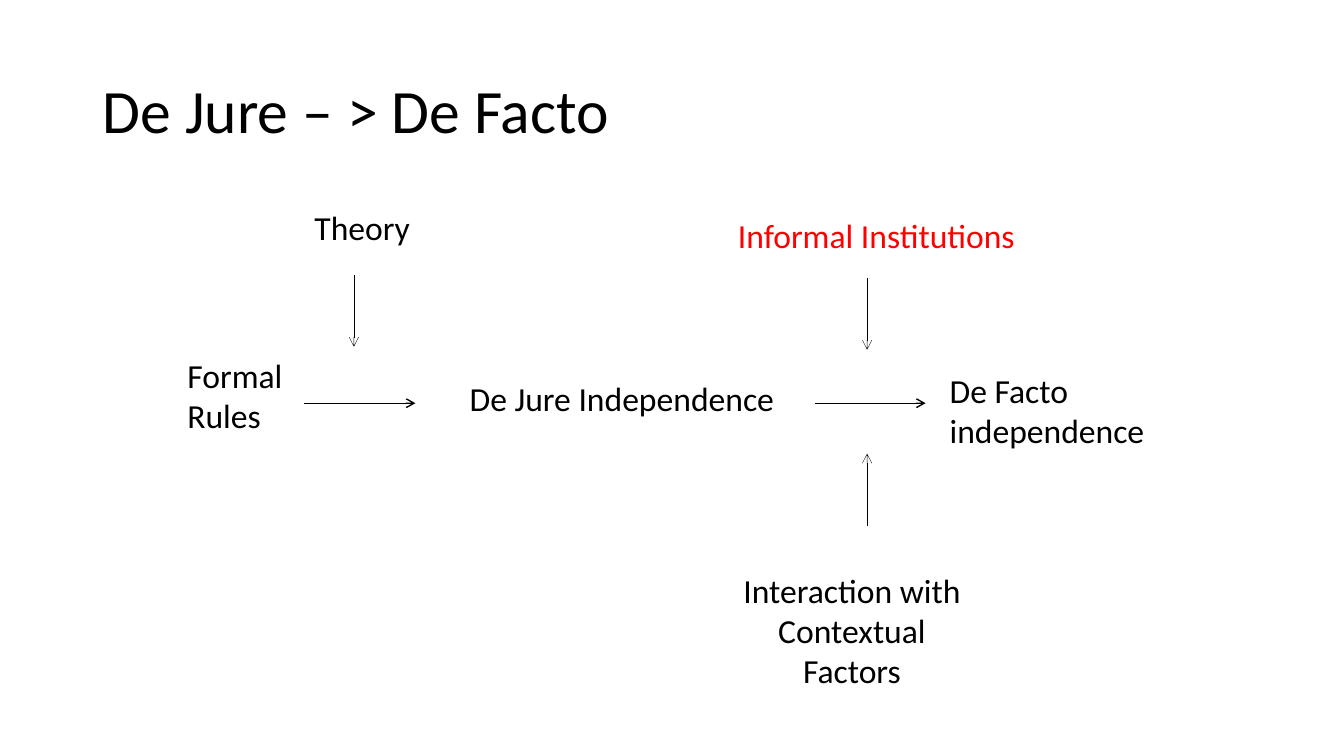
from pptx import Presentation
from pptx.dml.color import RGBColor
from pptx.enum.dml import MSO_LINE
from pptx.enum.shapes import MSO_CONNECTOR
from pptx.enum.text import MSO_ANCHOR, MSO_AUTO_SIZE, PP_ALIGN
from pptx.oxml.ns import qn
from pptx.util import Emu, Pt
from lxml import etree

PX = 9144  # 100 px to the inch
LEFT, CENTER = PP_ALIGN.LEFT, PP_ALIGN.CENTER
MIDDLE = MSO_ANCHOR.MIDDLE
STRAIGHT = MSO_CONNECTOR.STRAIGHT
DOTTED = MSO_LINE.ROUND_DOT
NO_FIT, GROW = MSO_AUTO_SIZE.NONE, MSO_AUTO_SIZE.SHAPE_TO_FIT_TEXT
TITLE_ONLY = 5

COLORS = {"ink": "000000", "accent": "FF0000", "paper": "FFFFFF"}


def px(*values):
    return [Emu(v * PX) for v in values]


class Diagram:
    font = "Calibri"
    title_size = 44
    label_size = 24

    def __init__(self, prs):
        self.slide = prs.slides.add_slide(prs.slide_layouts[TITLE_ONLY])
        fill = self.slide.background.fill
        fill.solid()
        fill.fore_color.rgb = self.color("paper")

    def color(self, name):
        return RGBColor.from_string(COLORS[name])

    def set_text(self, tf, text, size, color, align):
        tf.text = text
        p = tf.paragraphs[0]
        p.alignment = align
        for r in p.runs:
            r.font.name = self.font
            r.font.size = Pt(size)
            r.font.color.rgb = self.color(color)
        return p

    def title(self, text, box):
        sp = self.slide.shapes.title
        sp.left, sp.top, sp.width, sp.height = px(*box)
        tf = sp.text_frame
        tf.vertical_anchor = MIDDLE
        tf.auto_size = NO_FIT
        p = self.set_text(tf, text, self.title_size, "ink", LEFT)
        p.line_spacing = 0.9

    def label(self, text, box, color="ink", align=LEFT, wrap=True):
        tf = self.slide.shapes.add_textbox(*px(*box)).text_frame
        tf.word_wrap = wrap
        tf.auto_size = GROW
        self.set_text(tf, text, self.label_size, color, align)

    def arrow(self, start, end, width=1, dash=None):
        cxn = self.slide.shapes.add_connector(STRAIGHT, *px(*start, *end))
        line = cxn.line
        line.color.rgb = self.color("ink")
        line.width = Pt(width)
        if dash is not None:
            line.dash_style = dash
        props = cxn.element.spPr
        etree.SubElement(props.find(qn("a:ln")), qn("a:tailEnd"), type="arrow")
        etree.SubElement(props, qn("a:effectLst"))


def main():
    prs = Presentation()
    prs.slide_width, prs.slide_height = px(1333, 750)
    diagram = Diagram(prs)
    diagram.title("De Jure – > De Facto", (92, 40, 1150, 145))

    # Main chain, left to right
    diagram.label("Formal Rules", (176, 347, 135, 91))
    diagram.label("De Jure Independence", (456, 370, 331, 50))
    diagram.label("De Facto independence", (932, 362, 235, 91))
    chain_y = 400
    for x in (302, 808):
        diagram.arrow((x, chain_y), (x + 110, chain_y))

    # Influences on the chain
    diagram.label("Theory", (302, 200, 116, 50), wrap=False)
    diagram.label("Informal Institutions", (722, 208, 299, 50), color="accent", wrap=False)
    diagram.label("Interaction with Contextual Factors", (722, 560, 246, 131), align=CENTER)
    for x, start_y, length in ((351, 273, 71), (860, 276, 71), (860, 521, -71)):
        diagram.arrow((x, start_y), (x, start_y + length), width=0.25, dash=DOTTED)

    prs.save("out.pptx")


if __name__ == "__main__":
    main()
